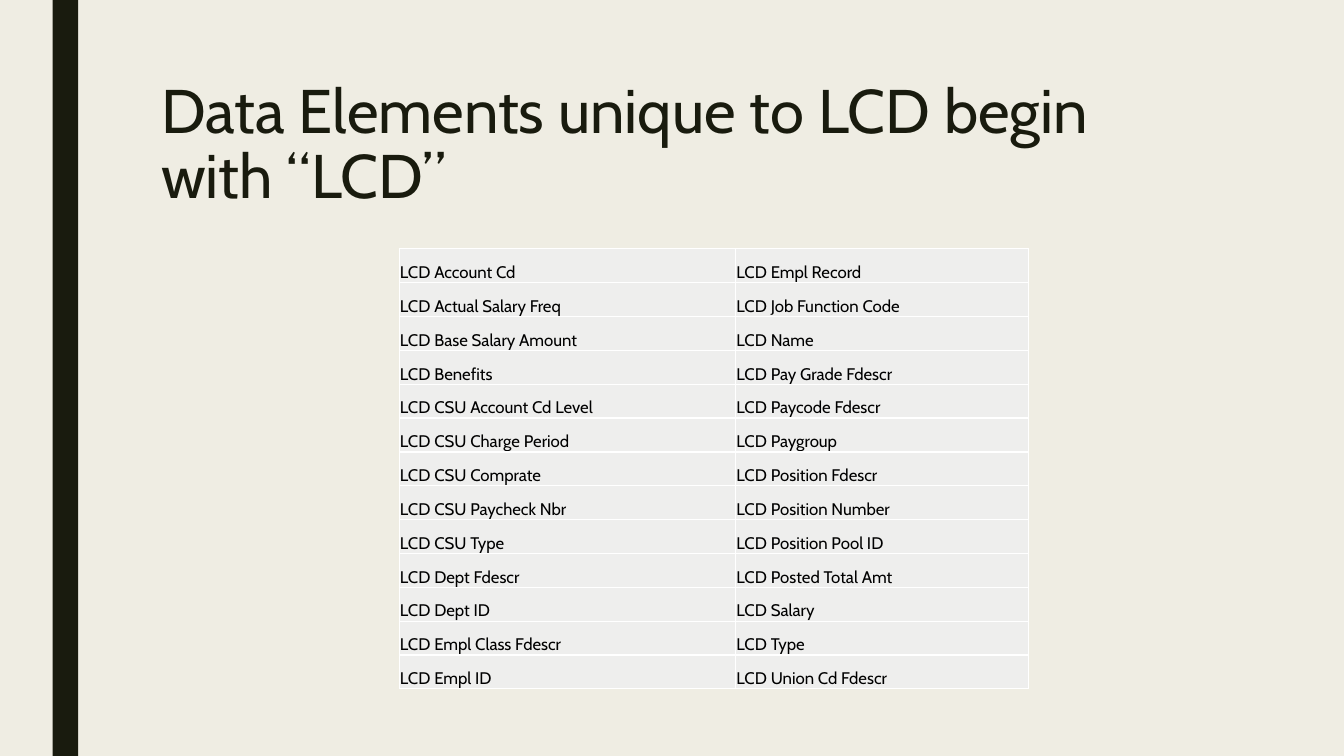
from lxml.etree import SubElement
from pptx import Presentation
from pptx.dml.color import RGBColor
from pptx.enum.shapes import MSO_SHAPE
from pptx.enum.text import MSO_ANCHOR, PP_ALIGN
from pptx.oxml.ns import qn
from pptx.util import Cm, Pt

CREAM = RGBColor(0xEF, 0xED, 0xE3)
DARK_OLIVE = RGBColor(0x19, 0x1B, 0x0E)
CELL_GREY = RGBColor(0xEE, 0xEE, 0xED)
BLACK = RGBColor(0, 0, 0)
WHITE = RGBColor(0xFF, 0xFF, 0xFF)
FONT = "Cabin"

ELEMENTS = [
    ("LCD Account Cd", "LCD Empl Record"),
    ("LCD Actual Salary Freq", "LCD Job Function Code"),
    ("LCD Base Salary Amount", "LCD Name"),
    ("LCD Benefits", "LCD Pay Grade Fdescr"),
    ("LCD CSU Account Cd Level", "LCD Paycode Fdescr"),
    ("LCD CSU Charge Period", "LCD Paygroup"),
    ("LCD CSU Comprate", "LCD Position Fdescr"),
    ("LCD CSU Paycheck Nbr", "LCD Position Number"),
    ("LCD CSU Type", "LCD Position Pool ID"),
    ("LCD Dept Fdescr", "LCD Posted Total Amt"),
    ("LCD Dept ID", "LCD Salary"),
    ("LCD Empl Class Fdescr", "LCD Type"),
    ("LCD Empl ID", "LCD Union Cd Fdescr"),
]
COLUMN_WIDTHS = [Cm(8.48), Cm(7.37)]
TABLE_HEIGHT = Cm(11.1)


def add_span(paragraph, text, size, color):
    span = paragraph.add_run()
    span.text = text
    span.font.name = FONT
    span.font.size = Pt(size)
    span.font.color.rgb = color


def add_borders(cell, color):
    properties = cell._tc.get_or_add_tcPr()
    for side in ("a:lnL", "a:lnR", "a:lnT", "a:lnB"):
        line = SubElement(properties, qn(side), w=str(Pt(1)))
        fill = SubElement(line, qn("a:solidFill"))
        SubElement(fill, qn("a:srgbClr"), val=str(color))


deck = Presentation()
deck.slide_width = Cm(33.87)
deck.slide_height = Cm(19.05)
page = deck.slides.add_slide(deck.slide_layouts[5])
page.background.fill.solid()
page.background.fill.fore_color.rgb = CREAM

side_bar = page.shapes.add_shape(
    MSO_SHAPE.RECTANGLE, Cm(1.33), 0, Cm(0.64), deck.slide_height)
side_bar.shadow.inherit = False
side_bar.fill.solid()
side_bar.fill.fore_color.rgb = DARK_OLIVE
side_bar.line.fill.background()

title = page.shapes.title
title.left, title.top = Cm(3.81), Cm(1.9)
title.width, title.height = Cm(26.67), Cm(4.11)
title.text_frame.word_wrap = True
title.text_frame.vertical_anchor = MSO_ANCHOR.TOP
heading = title.text_frame.paragraphs[0]
heading.alignment = PP_ALIGN.LEFT
heading.line_spacing = 0.89
add_span(heading, "Data Elements unique to LCD begin with “LCD”", 44, DARK_OLIVE)

table = page.shapes.add_table(
    len(ELEMENTS), len(COLUMN_WIDTHS), Cm(10.06), Cm(6.27),
    sum(COLUMN_WIDTHS), TABLE_HEIGHT).table
table.first_row = False
table.horz_banding = False
for column, width in zip(table.columns, COLUMN_WIDTHS):
    column.width = width

for row, names in zip(table.rows, ELEMENTS):
    row.height = TABLE_HEIGHT // len(ELEMENTS)
    for cell, name in zip(row.cells, names):
        add_borders(cell, WHITE)
        cell.fill.solid()
        cell.fill.fore_color.rgb = CELL_GREY
        cell.vertical_anchor = MSO_ANCHOR.BOTTOM
        cell.margin_left = cell.margin_right = cell.margin_top = Cm(0.02)
        cell.margin_bottom = 0
        add_span(cell.text_frame.paragraphs[0], name, 12, BLACK)

deck.save("out.pptx")
